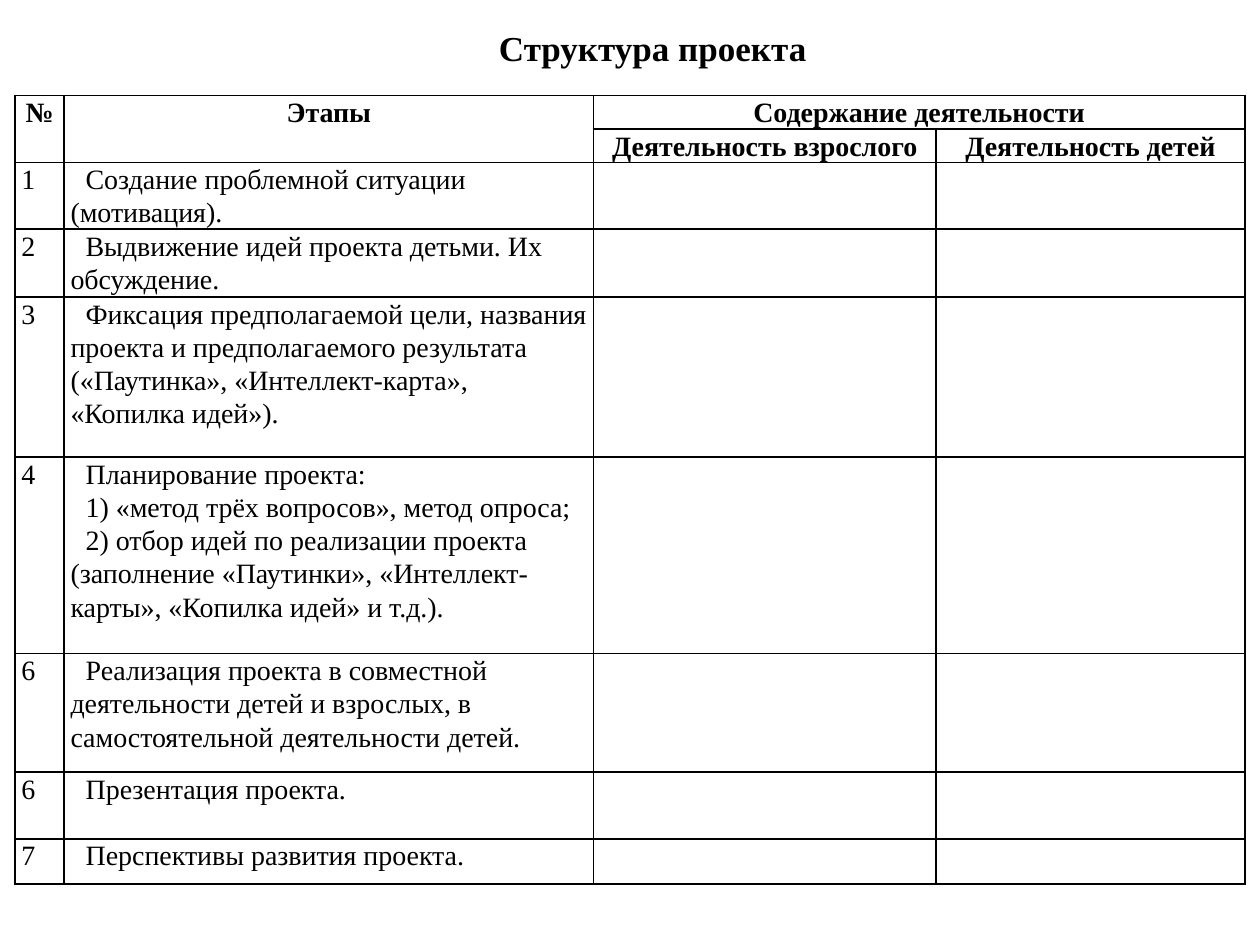
from lxml import etree
from pptx import Presentation
from pptx.dml.color import RGBColor
from pptx.enum.text import MSO_ANCHOR, PP_ALIGN
from pptx.oxml.ns import qn
from pptx.util import Inches, Pt

MID = MSO_ANCHOR.MIDDLE
CENTER, LEFT = PP_ALIGN.CENTER, PP_ALIGN.LEFT
FONT, INK = "Times New Roman", "000000"
INDENT = Inches(0.12)

COLS = [0.39, 4.2, 2.72, 2.45]
ROWS = [0.26, 0.26, 0.53, 0.54, 1.27, 1.56, 0.94, 0.53, 0.36]
HEADS = {
    (0, 0): "№",
    (0, 1): "Этапы",
    (0, 2): "Содержание деятельности",
    (1, 2): "Деятельность взрослого",
    (1, 3): "Деятельность детей",
}
STAGES = [
    ("1", "Создание проблемной ситуации (мотивация)."),
    ("2", "Выдвижение идей проекта детьми. Их обсуждение."),
    ("3", "Фиксация предполагаемой цели, названия проекта и предполагаемого "
          "результата («Паутинка», «Интеллект-карта», «Копилка идей»)."),
    ("4", "Планирование проекта:\n"
          "1) «метод трёх вопросов», метод опроса;\n"
          "2) отбор идей по реализации проекта (заполнение «Паутинки», "
          "«Интеллект-карты», «Копилка идей» и т.д.)."),
    ("6", "Реализация проекта в совместной деятельности детей и взрослых, "
          "в самостоятельной деятельности детей."),
    ("6", "Презентация проекта."),
    ("7", "Перспективы развития проекта."),
]


def style(frame, size, bold, align, indent=0):
    for para in frame.paragraphs:
        para.alignment = align
        props = para._p.get_or_add_pPr()
        props.set("marL", "0")
        props.set("indent", str(indent))
        for run in para.runs:
            run.font.name = FONT
            run.font.size = Pt(size)
            run.font.bold = bold
            run.font.color.rgb = RGBColor.from_string(INK)
        if not para.runs:
            etree.SubElement(para._p, qn("a:endParaRPr"), sz=str(size * 100))


def border(cell):
    props = cell._tc.get_or_add_tcPr()
    for i, side in enumerate(("lnL", "lnR", "lnT", "lnB")):
        line = etree.Element(qn("a:" + side), w=str(Pt(1)))
        fill = etree.SubElement(line, qn("a:solidFill"))
        etree.SubElement(fill, qn("a:srgbClr"), val=INK)
        props.insert(i, line)


prs = Presentation()
prs.slide_width, prs.slide_height = Inches(10), Inches(7.5)
slide = prs.slides.add_slide(prs.slide_layouts[5])

title = slide.shapes.title
title.left, title.top = Inches(3.19), Inches(0.16)
title.width, title.height = Inches(3.86), Inches(0.44)
title.text_frame.text = "Структура проекта"
title.text_frame.vertical_anchor = MID
style(title.text_frame, 20, True, CENTER, INDENT)

grid = slide.shapes.add_table(
    len(ROWS), len(COLS), Inches(0.12), Inches(0.76),
    Inches(sum(COLS)), Inches(sum(ROWS))).table
grid.first_row = grid.horz_banding = False
for col, width in zip(grid.columns, COLS):
    col.width = Inches(width)
for row, height in zip(grid.rows, ROWS):
    row.height = Inches(height)

texts = dict(HEADS)
for r, stage in enumerate(STAGES, 2):
    for c, text in enumerate(stage):
        texts[r, c] = text

for r in range(len(ROWS)):
    for c in range(len(COLS)):
        cell = grid.cell(r, c)
        cell.margin_left = cell.margin_right = Inches(0.05)
        cell.margin_top = cell.margin_bottom = 0
        cell.fill.background()
        border(cell)
        head = r < 2
        if (r, c) in texts:
            cell.text_frame.text = texts[r, c]
            for para in cell.text_frame.paragraphs:
                para.line_spacing = 1.07
        style(cell.text_frame, 16, head, CENTER if head else LEFT,
              INDENT if c == 1 and not head else 0)

grid.cell(0, 0).merge(grid.cell(1, 0))
grid.cell(0, 1).merge(grid.cell(1, 1))
grid.cell(0, 2).merge(grid.cell(0, 3))

prs.save("out.pptx")
